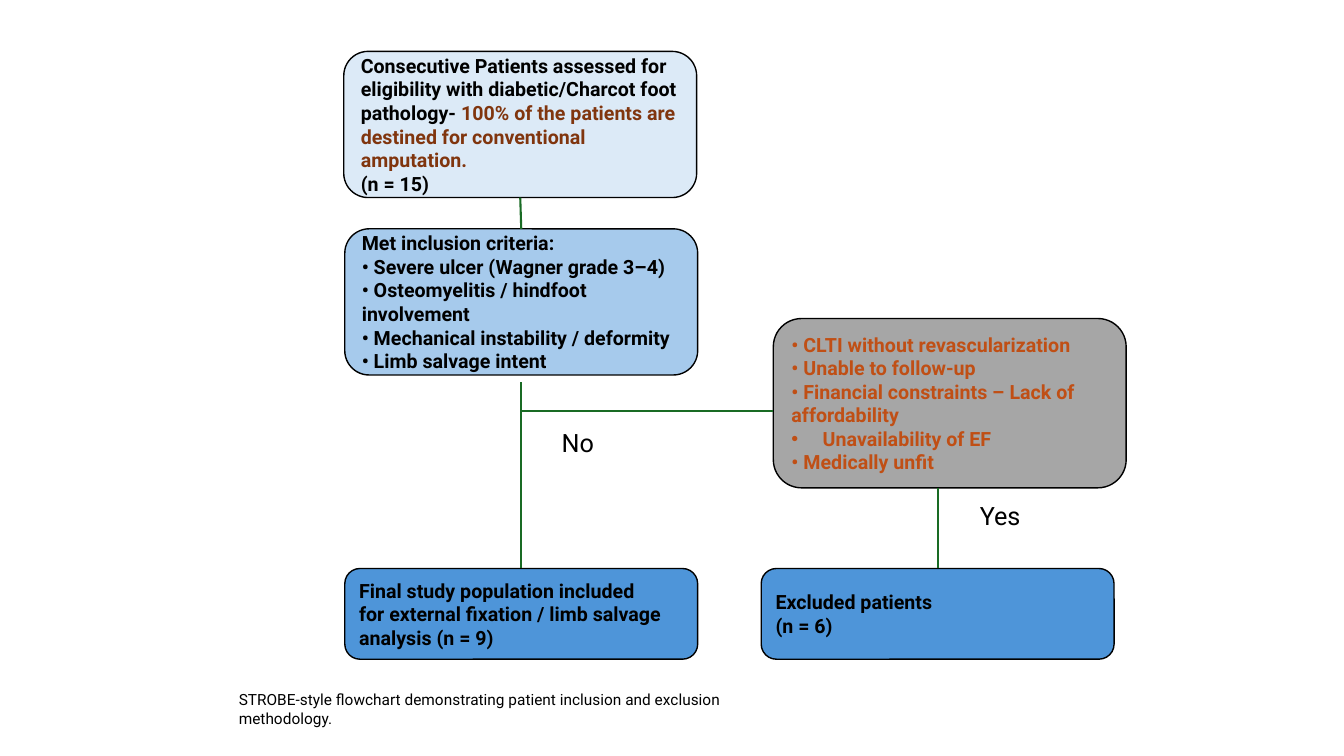
from lxml import etree
from pptx import Presentation
from pptx import util as u
from pptx.dml.color import RGBColor
from pptx.enum import shapes, text
from pptx.oxml.ns import qn

FONT = "Roboto"
BLACK, WHITE, GREEN = "000000", "FFFFFF", "196B24"
BROWN, ORANGE = "80350E", "C04F15"

# Layout in inches: left edges of the columns, top edges of the rows
SIZE = (13.33, 7.5)
BOX_W = 3.5
LEFT, EXCLUDED_COL, REASONS_COL = 3.42, 7.55, 7.67
ROW_TOPS = {"assessed": 0.51, "criteria": 2.27, "reasons": 3.16, "result": 5.64}
TALL, MIDDLE, SHORT = 1.45, 1.68, 0.9
BRANCH_TOP, BRANCH_Y = 3.79, 4.08
BULLET_INDENT = 0.31

# Boxes: name, left, row, height, fill, paragraphs (each a list of text and colour)
BOXES = [
    ("assessed", LEFT - 0.01, "assessed", TALL, "DCEAF7", [
        [("Consecutive Patients assessed for eligibility with diabetic/Charcot foot pathology-", BLACK),
         (" 100% of the patients are destined for conventional amputation.", BROWN)],
        [("(n = 15)", BLACK)]]),
    ("criteria", LEFT, "criteria", TALL, "A6CAEC", [
        [("Met inclusion criteria:", BLACK)],
        [("• Severe ulcer (Wagner grade 3–4)", BLACK)],
        [("• Osteomyelitis / hindfoot involvement", BLACK)],
        [("• Mechanical instability / deformity", BLACK)],
        [("• Limb salvage intent", BLACK)]]),
    ("excluded", EXCLUDED_COL, "result", SHORT, "4E95D9", [
        [("Excluded patients", BLACK)],
        [("(n = 6)", BLACK)]]),
    ("reasons", REASONS_COL, "reasons", MIDDLE, "A6A6A6", [
        [("• CLTI without revascularization", ORANGE)],
        [("• Unable to follow-up", ORANGE)],
        [("• Financial constraints – Lack of affordability", ORANGE)],
        [("Unavailability of EF", ORANGE)],
        [("• Medically unfit", ORANGE)]]),
    ("final", LEFT, "result", SHORT, "4E95D9", [
        [("Final study population included", BLACK)],
        [("for external fixation / limb salvage", BLACK)],
        [("analysis (n = 9)", BLACK)]]),
]
HANGING_BULLET = ("reasons", 3)

# Branch labels: text, left, top, width, height
LABELS = [("No", 5.44, 4.26, 0.58, 0.25), ("Yes", 9.42, 4.95, 1, 0.32)]
CAPTION = "STROBE-style flowchart demonstrating patient inclusion and exclusion methodology."
CAPTION_AT = (2.27, 6.8, 5.84, 0.29)


def rgb(value):
    return RGBColor.from_string(value)


def add_span(para, words, size, color=BLACK, bold=False):
    span = para.add_run()
    span.text = words
    span.font.name, span.font.size, span.font.bold = FONT, u.Pt(size), bold
    span.font.color.rgb = rgb(color)


def add_box(page, kind, at, fill, line, width):
    box = page.shapes.add_shape(kind, *map(u.Inches, at))
    box.shadow.inherit = False
    box.fill.solid()
    box.fill.fore_color.rgb = rgb(fill)
    box.line.color.rgb = rgb(line)
    box.line.width = u.Pt(width)
    box.text_frame.word_wrap = True
    box.text_frame.vertical_anchor = text.MSO_ANCHOR.MIDDLE
    return box


def hang_bullet(para):
    props = para._p.get_or_add_pPr()
    props.set("marL", str(u.Inches(BULLET_INDENT)))
    props.set("indent", str(-u.Inches(BULLET_INDENT)))
    etree.SubElement(props, qn("a:buFont")).set("typeface", "Arial")
    etree.SubElement(props, qn("a:buChar")).set("char", "•")


def add_line(page, start, end, begin_box=None, end_box=None):
    line = page.shapes.add_connector(
        shapes.MSO_CONNECTOR.STRAIGHT, *map(u.Inches, (*start, *end)))
    line.line.color.rgb = rgb(GREEN)
    line.line.width = u.Pt(1.5)
    etree.SubElement(line._element.spPr, qn("a:effectLst"))
    if begin_box is not None:
        line.begin_connect(begin_box, 2)
    if end_box is not None:
        line.end_connect(end_box, 0)


def main():
    deck = Presentation()
    deck.slide_width, deck.slide_height = map(u.Inches, SIZE)
    page = deck.slides.add_slide(deck.slide_layouts[6])

    # Flowchart boxes
    boxes = {}
    for name, left, row, height, fill, paragraphs in BOXES:
        box = add_box(page, shapes.MSO_SHAPE.ROUNDED_RECTANGLE,
                      (left, ROW_TOPS[row], BOX_W, height), fill, BLACK, 1)
        boxes[name] = box
        frame = box.text_frame
        for i, spans in enumerate(paragraphs):
            para = frame.add_paragraph() if i else frame.paragraphs[0]
            para.alignment = text.PP_ALIGN.LEFT
            if (name, i) == HANGING_BULLET:
                hang_bullet(para)
            for words, color in spans:
                add_span(para, words, 14, color, bold=True)

    # Connecting lines
    trunk = LEFT + BOX_W / 2
    excluded_mid = EXCLUDED_COL + BOX_W / 2
    result_top = ROW_TOPS["result"]
    add_line(page, (trunk, ROW_TOPS["assessed"] + TALL), (trunk, ROW_TOPS["criteria"]),
             boxes["assessed"], boxes["criteria"])
    add_line(page, (trunk, BRANCH_TOP), (trunk, result_top), end_box=boxes["final"])
    add_line(page, (trunk, BRANCH_Y), (REASONS_COL, BRANCH_Y))
    add_line(page, (excluded_mid, ROW_TOPS["reasons"] + MIDDLE),
             (excluded_mid, result_top), end_box=boxes["excluded"])

    # Caption
    caption = page.shapes.add_textbox(*map(u.Inches, CAPTION_AT))
    caption.text_frame.word_wrap = True
    add_span(caption.text_frame.paragraphs[0], CAPTION, 11)

    # Branch labels
    for words, *at in LABELS:
        label = add_box(page, shapes.MSO_SHAPE.RECTANGLE, at, WHITE, WHITE, 1.5)
        para = label.text_frame.paragraphs[0]
        para.alignment = text.PP_ALIGN.CENTER
        add_span(para, words, 18)

    deck.save("out.pptx")


if __name__ == "__main__":
    main()
